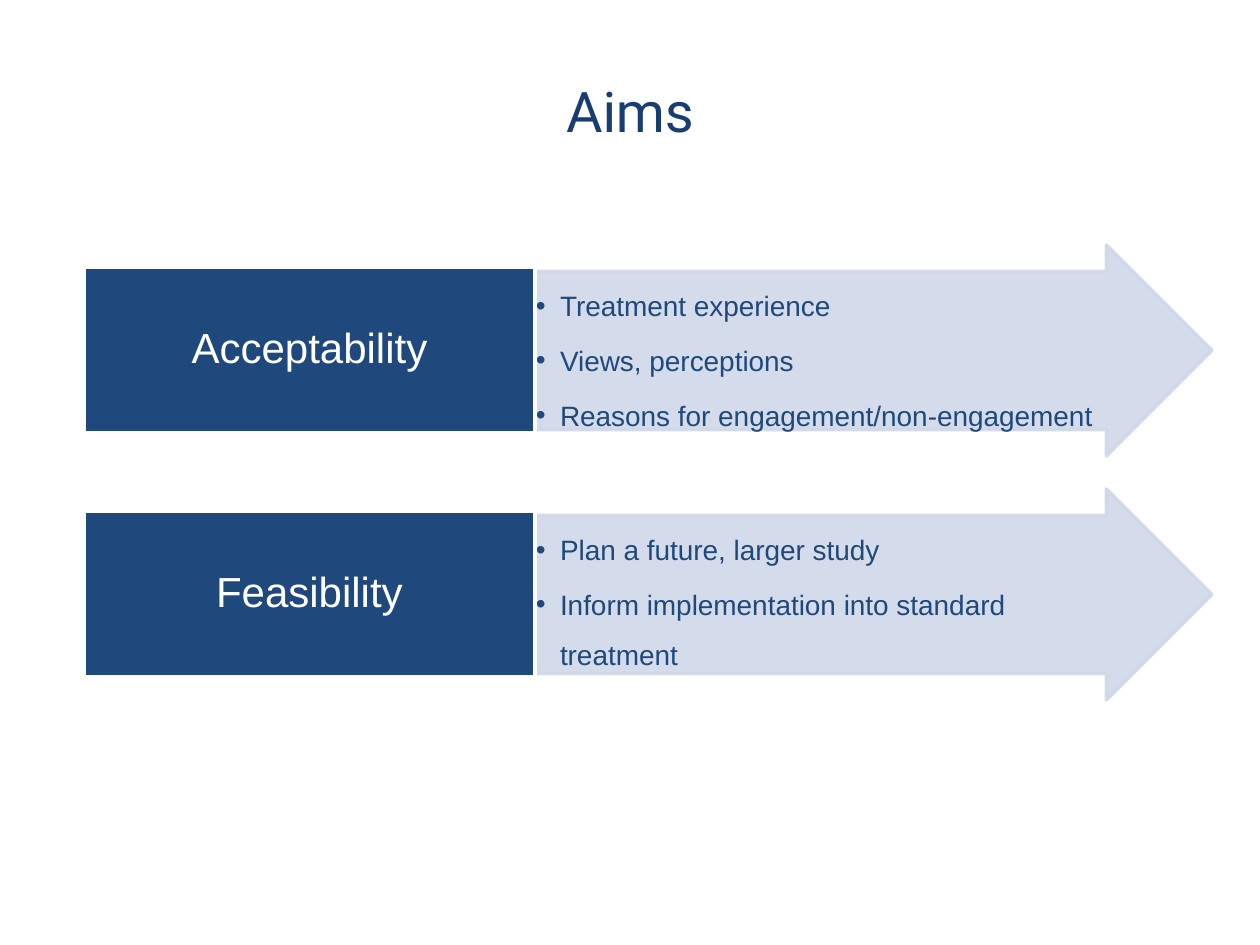
from lxml.etree import SubElement
from pptx import Presentation
from pptx.dml.color import RGBColor
from pptx.enum.shapes import MSO_SHAPE
from pptx.enum.text import MSO_ANCHOR, PP_ALIGN
from pptx.oxml.ns import qn
from pptx.util import Emu, Pt

SCALE = 914400 / 126
NAVY = RGBColor(0x1F, 0x49, 0x7D)
INK = RGBColor(0x18, 0x3D, 0x71)
PALE = RGBColor(0xD0, 0xD8, 0xE8)
WHITE = RGBColor(0xFF, 0xFF, 0xFF)

TOP = 245
PITCH = 244
AIMS = [
    ("Acceptability", ["Treatment experience", "Views, perceptions",
                       "Reasons for engagement/non-engagement"]),
    ("Feasibility", ["Plan a future, larger study",
                     "Inform implementation into standard treatment"]),
]


def px(n):
    return Emu(round(n * SCALE))


def set_font(para, size, color, name="Arial"):
    for run in para.runs:
        run.font.size = Pt(size)
        run.font.name = name
        run.font.color.rgb = color


def set_frame(frame, inset, anchor):
    frame.word_wrap = True
    frame.vertical_anchor = anchor
    frame.margin_left = frame.margin_right = px(inset)
    frame.margin_top = frame.margin_bottom = px(inset)


def add_title(slide, text):
    title = slide.shapes.title
    title.left, title.top, title.width, title.height = map(px, (80, 73, 1100, 71))
    frame = title.text_frame
    frame.text = text
    set_frame(frame, 0, MSO_ANCHOR.TOP)
    frame.margin_top = px(3)
    para = frame.paragraphs[0]
    para.alignment = PP_ALIGN.CENTER
    set_font(para, 32, INK, "Roboto")
    para.runs[0].font._element.set("spc", "-10")


def add_block(slide, kind, box, fill, line):
    shape = slide.shapes.add_shape(kind, *map(px, box))
    shape.shadow.inherit = False
    shape.fill.solid()
    shape.fill.fore_color.rgb = fill
    shape.line.color.rgb = line
    shape.line.width = Pt(2)
    return shape


def add_arrow(slide, top):
    arrow = add_block(slide, MSO_SHAPE.RIGHT_ARROW, (535, top, 677, 211), PALE, PALE)
    arrow.adjustments[0] = 0.75
    arrow.adjustments[1] = 0.5
    for color in arrow._element.spPr.iter(qn("a:srgbClr")):
        SubElement(color, qn("a:alpha"), val="90000")


def add_bullets(slide, top, items):
    box = slide.shapes.add_textbox(*map(px, (535, top, 597, 158)))
    frame = box.text_frame
    set_frame(frame, 1, MSO_ANCHOR.TOP)
    frame.text = "\n".join(items)
    for para in frame.paragraphs:
        para.level = 1
        para.line_spacing = 1.5
        para.space_after = Pt(2.5)
        props = para._p.get_or_add_pPr()
        props.set("marL", str(px(24)))
        props.set("indent", str(px(-24)))
        SubElement(props, qn("a:buFont"), typeface="Arial")
        SubElement(props, qn("a:buChar"), char="•")
        set_font(para, 16, NAVY)


def add_label(slide, top, text):
    label = add_block(slide, MSO_SHAPE.RECTANGLE, (84, top, 451, 166), NAVY, WHITE)
    frame = label.text_frame
    set_frame(frame, 6, MSO_ANCHOR.MIDDLE)
    frame.text = text
    para = frame.paragraphs[0]
    para.alignment = PP_ALIGN.CENTER
    para.line_spacing = 0.9
    set_font(para, 24, WHITE)


def main():
    deck = Presentation()
    deck.slide_width, deck.slide_height = px(1260), px(945)
    slide = deck.slides.add_slide(deck.slide_layouts[5])
    add_title(slide, "Aims")
    for row, (name, items) in enumerate(AIMS):
        top = TOP + row * PITCH
        add_arrow(slide, top)
        add_bullets(slide, top + 26, items)
        add_label(slide, top + 22, name)
    deck.save("out.pptx")


if __name__ == "__main__":
    main()
